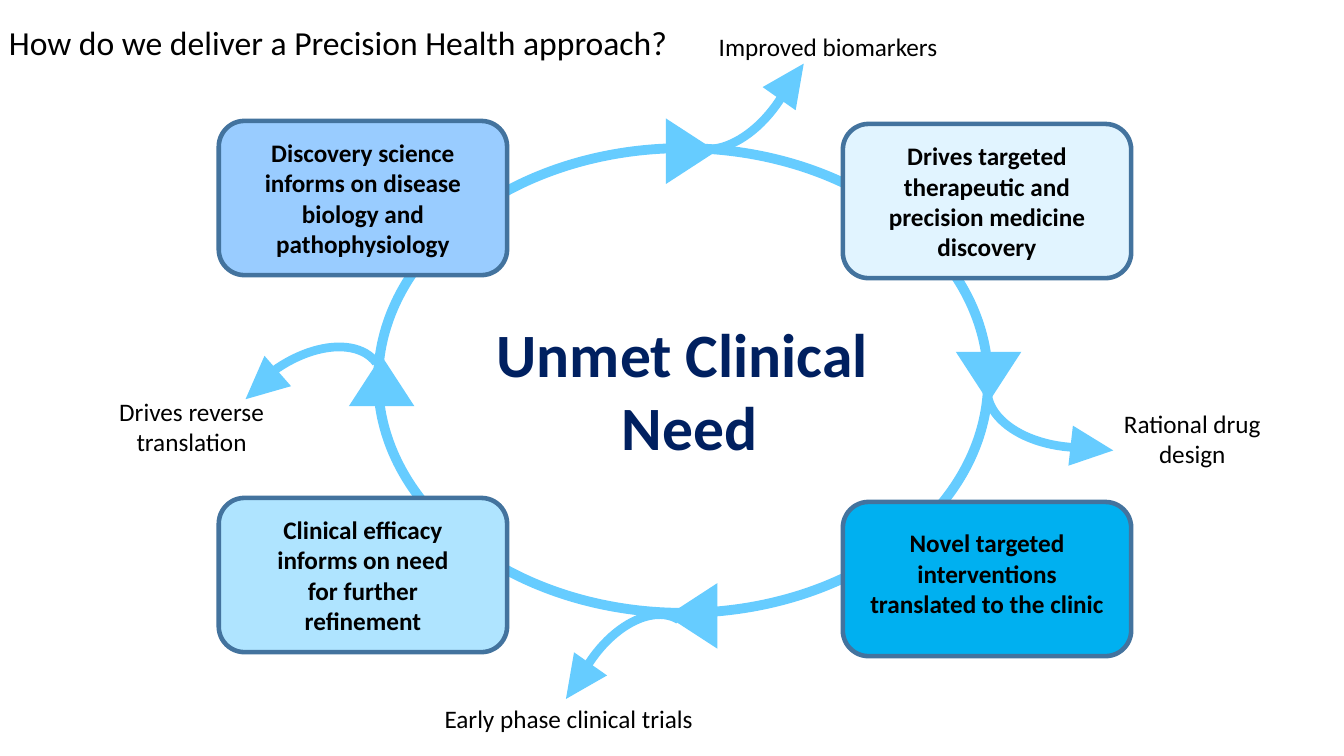
"""Builds the Precision Health cycle slide."""
from pptx import Presentation
from pptx.dml.color import RGBColor
from pptx.enum.shapes import MSO_SHAPE
from pptx.enum.text import MSO_ANCHOR, PP_ALIGN
from pptx.util import Inches, Pt

COLORS = {
    "cycle": "66CCFF", "border": "43739E", "text": "000000", "headline": "002060",
    "discovery": "99CCFF", "targeted": "E1F4FF", "novel": "00B0F0", "efficacy": "AFE4FF",
}


class CycleSlide:
    """Holds the style and the slide; lengths are tenth-inch columns and rows."""

    font = "Calibri"
    cell = 0.1

    def __init__(self, presentation):
        self.slide = presentation.slides.add_slide(presentation.slide_layouts[6])

    def frame(self, *lengths):
        return [Inches(length * self.cell) for length in lengths]

    def color(self, name):
        return RGBColor.from_string(COLORS[name])

    def shape(self, kind, position, fill=None, line=None, weight=0, rotation=0):
        shape = self.slide.shapes.add_shape(kind, *self.frame(*position))
        shape.shadow.inherit = False
        shape.rotation = rotation
        if fill:
            shape.fill.solid()
            shape.fill.fore_color.rgb = self.color(fill)
        else:
            shape.fill.background()
        if line:
            shape.line.color.rgb = self.color(line)
            shape.line.width = Pt(weight)
        else:
            shape.line.fill.background()
        return shape

    def head(self, center, size, rotation):
        (x, y), (width, height) = center, size
        position = (x - width / 2, y - height / 2, width, height)
        self.shape(MSO_SHAPE.ISOSCELES_TRIANGLE, position, "cycle", rotation=rotation)

    def branch(self, position, rotation, head_center, head_rotation):
        self.shape(MSO_SHAPE.ARC, position, line="cycle", weight=6.25, rotation=rotation)
        self.head(head_center, (4, 4.25), head_rotation)

    def set_text(self, shape, text, size=18, color="text", bold=False,
                 align=PP_ALIGN.CENTER, spacing=None):
        shape.text_frame.text = text
        for paragraph in shape.text_frame.paragraphs:
            paragraph.alignment = align
            paragraph.line_spacing = spacing
            for run in paragraph.runs:
                run.font.name = self.font
                run.font.size = Pt(size)
                run.font.bold = bold
                run.font.color.rgb = self.color(color)

    def label(self, position, text, wrap=True, anchor=MSO_ANCHOR.TOP, **style):
        shape = self.slide.shapes.add_textbox(*self.frame(*position))
        shape.text_frame.word_wrap = wrap
        shape.text_frame.vertical_anchor = anchor
        self.set_text(shape, text, **style)

    def stage(self, left, top, fill, text, inset, bottom=0.5):
        shape = self.shape(MSO_SHAPE.ROUNDED_RECTANGLE, (left, top, 28.6, 15.3),
                           fill, "border", 3.25)
        text_frame = shape.text_frame
        text_frame.word_wrap = True
        text_frame.vertical_anchor = MSO_ANCHOR.MIDDLE
        text_frame.margin_left, text_frame.margin_right = self.frame(inset, inset)
        text_frame.margin_top, text_frame.margin_bottom = self.frame(0.5, bottom)
        self.set_text(shape, text, bold=True)


def main():
    presentation = Presentation()
    presentation.slide_width = Inches(13.33)
    presentation.slide_height = Inches(7.5)
    cycle = CycleSlide(presentation)

    cycle.branch((64, 1.2, 17.9, 10.9), 121.3, (78.5, 8.05), 35)
    cycle.branch((54, 63.6, 17.5, 10.7), 301.3, (57.35, 67.6), 215)
    cycle.shape(MSO_SHAPE.OVAL, (37.5, 14.7, 60.5, 46.1), line="cycle", weight=7)

    cycle.stage(21.7, 12, "discovery",
                "Discovery science informs on disease biology and pathophysiology", 3.4)
    cycle.stage(83.6, 12.3, "targeted",
                "Drives targeted therapeutic and precision medicine discovery", 1.6)
    cycle.stage(83.6, 49.8, "novel",
                "Novel targeted interventions translated to the clinic", 1.6, bottom=1.7)
    cycle.stage(21.7, 49.4, "efficacy",
                "Clinical efficacy informs on need for further refinement", 3.4)
    cycle.label((48.1, 30.8, 40.6, 15.8), "Unmet Clinical \nNeed", wrap=False,
                size=44, color="headline", bold=True)

    ring_heads = [(68.55, 15), (98.05, 37.4), (68.65, 61.1), (37.85, 37.8)]
    for quarter, center in enumerate(ring_heads, start=1):
        cycle.head(center, (6.5, 5), quarter * 90 % 360)

    cycle.branch((97.9, 33.5, 17.9, 10.9), 182.6, (108.3, 44.45), 96.4)
    cycle.branch((21.5, 35.8, 17.5, 10.7), 323.8, (25.95, 38.2), 228.8)

    cycle.label((70.3, 2.6, 23.9, 4), "Improved biomarkers", wrap=False, align=PP_ALIGN.LEFT)
    cycle.label((108.3, 40, 19.9, 7.1), "Rational drug design")
    cycle.label((40.9, 69.3, 31, 4), "Early phase clinical trials")
    cycle.label((7.2, 38.8, 23.6, 7.1), "Drives reverse translation")
    cycle.label((-0.1, -2.8, 115, 14.5), "How do we deliver a Precision Health approach?",
                anchor=MSO_ANCHOR.MIDDLE, size=24, align=PP_ALIGN.LEFT, spacing=0.9)

    presentation.save("out.pptx")


if __name__ == "__main__":
    main()
